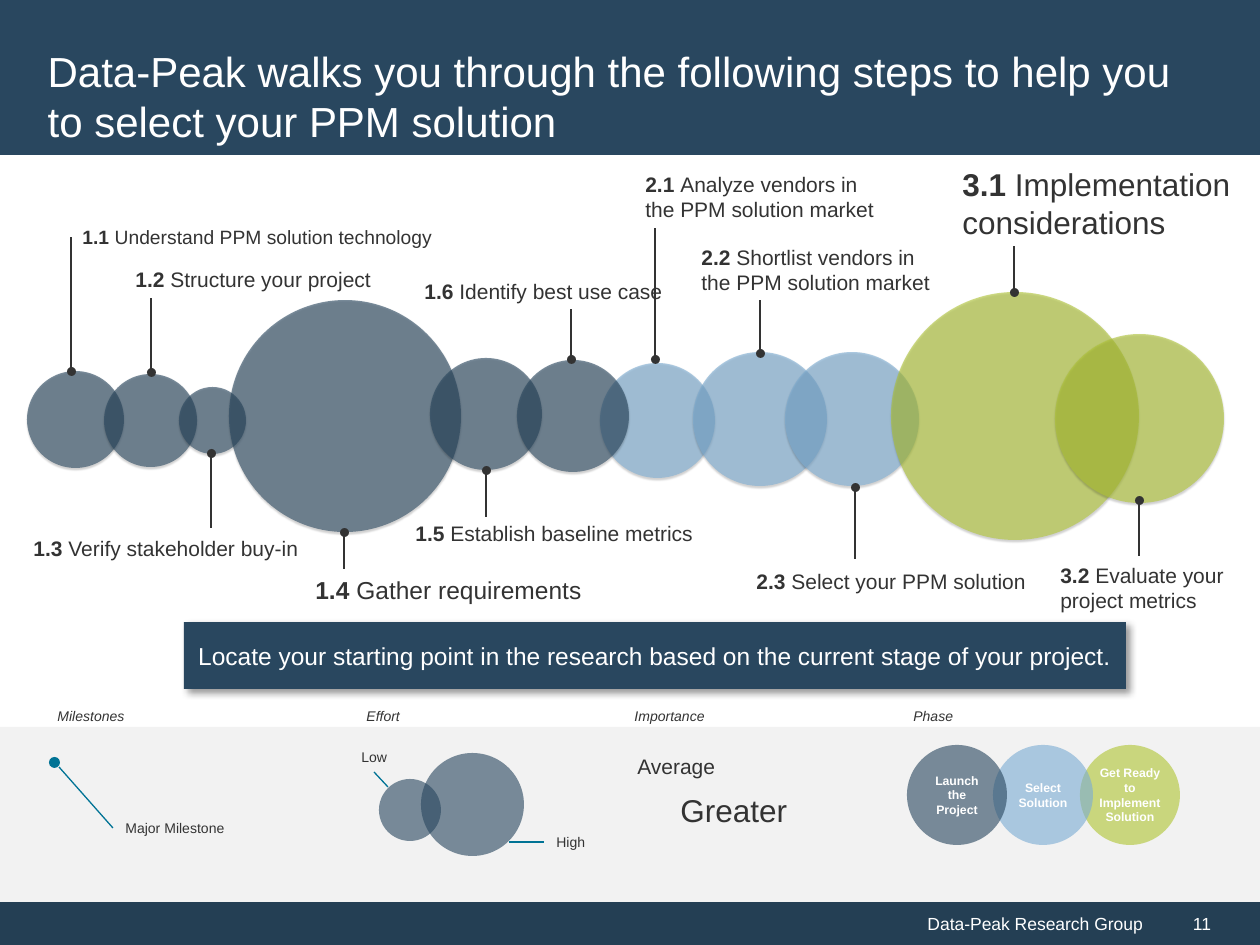
from collections import namedtuple
from dataclasses import dataclass

from lxml import etree
from pptx import Presentation
from pptx import util as u
from pptx.dml.color import RGBColor
from pptx.enum import shapes, text
from pptx.oxml.ns import qn

PX = 914400 / 126
Step = namedtuple("Step", "number name size circle dot leader_end label")


@dataclass(frozen=True)
class Theme:
    font: str = "Arial"
    navy: str = "29475F"
    footer: str = "243F54"
    sky: str = "7CADD4"
    lime: str = "B0C534"
    teal: str = "007395"
    ink: str = "333333"
    panel: str = "F2F2F2"
    white: str = "FFFFFF"
    title: int = 24
    large: int = 18
    medium: int = 14
    normal: int = 12
    compact: int = 11
    footnote: int = 10
    small: int = 8
    tiny: int = 7


T = Theme()

# circle: x, y, diameter; dot: centre x, y; label: x, y, width, height
PHASES = [
    (T.sky, [
        Step("2.1", "Analyze vendors in the PPM solution market", T.normal,
             (600, 208, 115), (655, 204), 73, (633, 10, 265, 63)),
        Step("2.2", "Shortlist vendors in the PPM solution market", T.normal,
             (693, 197, 134), (760, 198), 145, (689, 83, 268, 63)),
        Step("2.3", "Select your PPM solution", T.normal,
             (785, 197, 134), (855, 332), 404, (744, 407, 307, 38)),
    ]),
    (T.lime, [
        Step("3.1", "Implementation considerations", T.large,
             (891, 137, 248), (1014, 137), 91, (950, 4, 310, 89)),
        Step("3.2", "Evaluate your project metrics", T.normal,
             (1055, 179, 169), (1139, 345), 401, (1048, 401, 212, 63)),
    ]),
    (T.navy, [
        Step("1.1", "Understand PPM solution technology", T.compact,
             (27, 216, 97), (71, 216), 82, (70, 64, 386, 37)),
        Step("1.2", "Structure your project", T.normal,
             (104, 219, 93), (151, 217), 143, (123, 105, 266, 38)),
        Step("1.3", "Verify stakeholder buy-in", T.normal,
             (179, 232, 67), (211, 298), 373, (21, 374, 295, 38)),
        Step("1.4", "Gather requirements", T.medium,
             (229, 145, 232), (344, 377), 414, (303, 414, 292, 43)),
        Step("1.5", "Establish baseline metrics", T.normal,
             (430, 203, 112), (486, 315), 362, (403, 359, 310, 38)),
        Step("1.6", "Identify best use case", T.normal,
             (517, 205, 112), (571, 204), 154, (412, 117, 310, 38)),
    ]),
]


def px(*lengths):
    return [u.Emu(round(n * PX)) for n in lengths]


def rgb(color):
    return RGBColor.from_string(color)


def style(p, size, color, bold=None, italic=None):
    f = p.font
    f.name, f.size, f.bold, f.italic = T.font, u.Pt(size), bold, italic
    f.color.rgb = rgb(color)


def add_filled(s, kind, x, y, w, h, color, alpha=None):
    sp = s.shapes.add_shape(kind, *px(x, y, w, h))
    sp.shadow.inherit = False
    sp.fill.solid()
    sp.fill.fore_color.rgb = rgb(color)
    sp.line.fill.background()
    if alpha:
        clr = sp._element.spPr.find(qn("a:solidFill"))[0]
        etree.SubElement(clr, qn("a:alpha"), val=str(alpha * 1000))
    return sp


def add_bar(s, x, y, w, h, color):
    return add_filled(s, shapes.MSO_SHAPE.RECTANGLE, x, y, w, h, color)


def add_circle(s, x, y, d, color, alpha=None):
    return add_filled(s, shapes.MSO_SHAPE.OVAL, x, y, d, d, color, alpha)


def add_shadow(sp, blur, distance, angle, alpha):
    """Blur and distance in points, angle in degrees, alpha in percent."""
    effects = sp._element.spPr.find(qn("a:effectLst"))
    shadow = etree.SubElement(
        effects, qn("a:outerShdw"), blurRad=str(u.Pt(blur)), dist=str(u.Pt(distance)),
        dir=str(angle * 60000), algn="tl", rotWithShape="0")
    clr = etree.SubElement(shadow, qn("a:srgbClr"), val="000000")
    etree.SubElement(clr, qn("a:alpha"), val=str(alpha * 1000))


def add_line(s, x1, y1, x2, y2, color):
    c = s.shapes.add_connector(shapes.MSO_CONNECTOR.STRAIGHT, *px(x1, y1, x2, y2))
    c.line.color.rgb = rgb(color)
    c.line.width = u.Pt(0.75)
    etree.SubElement(c._element.spPr, qn("a:effectLst"))


def add_text(s, x, y, w, h, runs, size, wrap=True, italic=None):
    """Runs are (text, bold) pairs."""
    tf = s.shapes.add_textbox(*px(x, y, w, h)).text_frame
    tf.word_wrap = wrap
    p = tf.paragraphs[0]
    style(p, size, T.ink, italic=italic)
    for words, bold in runs:
        r = p.add_run()
        r.text, r.font.bold = words, bold


def set_text(sp, words, size, align, bold=None):
    tf = sp.text_frame
    tf.word_wrap = True
    tf.vertical_anchor = text.MSO_ANCHOR.MIDDLE
    p = tf.paragraphs[0]
    p.text, p.alignment = words, align
    style(p, size, T.white, bold)
    return tf


def header(s, x, y, w, h):
    add_bar(s, x, y, w, h, T.navy)
    title = s.shapes.title
    title.left, title.top, title.width, title.height = px(x + 35, y + 35, w - 72, h - 34)
    set_text(title, "Data-Peak walks you through the following steps to help you to "
             "select your PPM solution", T.title, text.PP_ALIGN.LEFT)
    s.shapes._spTree.append(title._element)  # in front of the bar


def footer(s, x, y, w, h):
    page_w = 105
    owner = add_bar(s, x, y, w - page_w, h, T.footer)
    set_text(owner, "Data-Peak Research Group", T.footnote, text.PP_ALIGN.RIGHT)
    page = add_bar(s, x + w - page_w, y, page_w, h, T.footer)
    set_text(page, "11", T.footnote, text.PP_ALIGN.LEFT).margin_left = px(38)[0]


def timeline(s, x, y):
    for color, steps in PHASES:
        for step in steps:
            cx, cy, d = step.circle
            add_shadow(add_circle(s, x + cx, y + cy, d, color, 60), 1, 1, 90, 30)
        for step in steps:
            dx, dy = x + step.dot[0], y + step.dot[1]
            lx, ly, w, h = step.label
            add_text(s, x + lx, y + ly, w, h,
                     [(step.number + " ", True), (step.name, False)], step.size)
            add_line(s, dx, dy, dx, y + step.leader_end, T.ink)
            add_circle(s, dx - 4, dy - 4, 9, T.ink)


def banner(s, x, y, w, h):
    sp = add_bar(s, x, y, w, h, T.navy)
    add_shadow(sp, 4, 3, 45, 40)
    set_text(sp, "Locate your starting point in the research based on the current "
             "stage of your project.", T.medium, text.PP_ALIGN.CENTER)


def legend(s, x, y, w):
    add_bar(s, x, y + 26, w, 175, T.panel)
    for tx, tw, name in [(45, 93, "Milestones"), (354, 59, "Effort"),
                         (622, 97, "Importance"), (901, 66, "Phase")]:
        add_text(s, x + tx, y, tw, 30, [(name, None)], T.small, False, True)
    for cx, cy, d, color, alpha in [(49, 56, 11, T.teal, None), (421, 52, 103, T.navy, 61),
                                    (379, 78, 62, T.navy, 61)]:
        add_circle(s, x + cx, y + cy, d, color, alpha)
    for x1, y1, x2, y2 in [(59, 66, 113, 127), (388, 86, 374, 71), (509, 141, 544, 141)]:
        add_line(s, x + x1, y + y1, x + x2, y + y2, T.teal)
    for tx, ty, tw, th, name, size in [
            (113, 112, 126, 30, "Major Milestone", T.small), (349, 41, 51, 30, "Low", T.small),
            (544, 126, 54, 30, "High", T.small), (625, 46, 103, 38, "Average", T.normal),
            (668, 84, 133, 51, "Greater", T.large)]:
        add_text(s, x + tx, y + ty, tw, th, [(name, None)], size, False)
    for cx, color, name, inset in [(1080, T.lime, "Get Ready to Implement Solution", 0),
                                   (993, T.sky, "Select Solution", 0),
                                   (907, T.navy, "Launch the\vProject", 13)]:
        sp = add_circle(s, x + cx, y + 44, 100, color, 61)
        tf = set_text(sp, name, T.tiny, text.PP_ALIGN.CENTER, True)
        tf.margin_left = tf.margin_right = px(inset)[0]


def main():
    prs = Presentation()
    prs.slide_width, prs.slide_height = px(1260, 945)
    s = prs.slides.add_slide(prs.slide_layouts[5])
    header(s, 0, 0, 1260, 155)
    footer(s, 0, 900, 1260, 46)
    legend(s, 0, 701, 1260)
    timeline(s, 0, 155)
    banner(s, 184, 622, 942, 67)
    prs.save("out.pptx")


if __name__ == "__main__":
    main()
